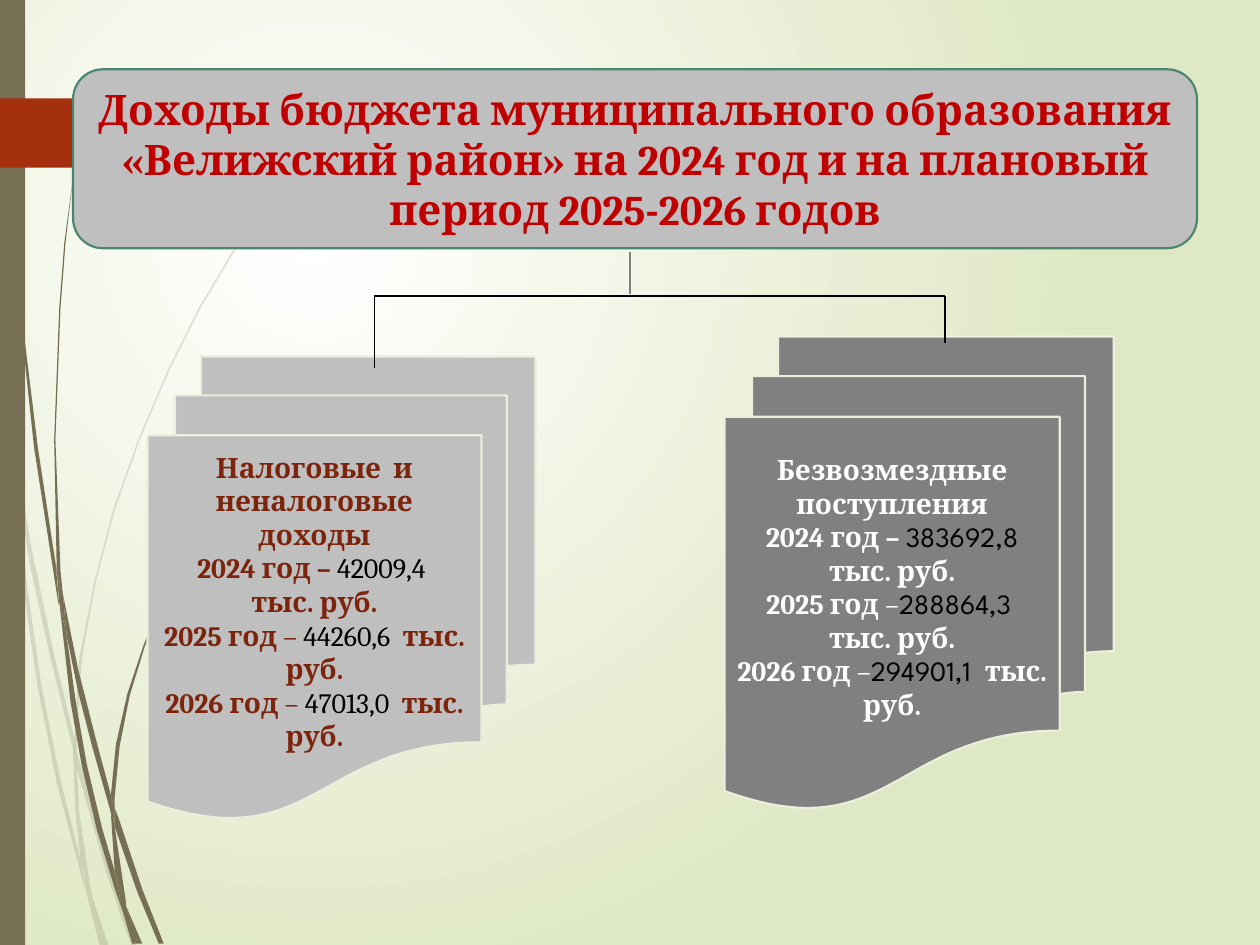
from dataclasses import dataclass

from lxml import etree
from pptx import Presentation
from pptx.dml.color import RGBColor
from pptx.enum.shapes import MSO_CONNECTOR, MSO_SHAPE
from pptx.enum.text import MSO_ANCHOR, PP_ALIGN
from pptx.oxml.ns import qn
from pptx.util import Emu, Inches, Pt

RECT, ROUND = MSO_SHAPE.RECTANGLE, MSO_SHAPE.ROUNDED_RECTANGLE
DOCS = MSO_SHAPE.FLOWCHART_MULTIDOCUMENT
STRAIGHT = MSO_CONNECTOR.STRAIGHT
MIDDLE, CENTER = MSO_ANCHOR.MIDDLE, PP_ALIGN.CENTER

WHITE = RGBColor(0xFF, 0xFF, 0xFF)
BLACK = RGBColor(0, 0, 0)
PALE_GREEN = RGBColor(0xDF, 0xE8, 0xC4)
CREAM = RGBColor(0xEA, 0xEF, 0xDB)
OLIVE = RGBColor(0x76, 0x6F, 0x54)
RUST = RGBColor(0xA5, 0x30, 0x10)
BROWN = RGBColor(0x7C, 0x24, 0x0C)
RED = RGBColor(0xC0, 0, 0)
GREEN = RGBColor(0x4B, 0x86, 0x6E)
SILVER = RGBColor(0xBF, 0xBF, 0xBF)
GRAY = RGBColor(0x80, 0x80, 0x80)

SERIF, SANS = "Cambria", "League Spartan"
WIDTH, HEIGHT = Inches(10), Inches(7.5)
UNIT = WIDTH / 10  # square grid, 10 columns by 7.5 rows

Point = tuple[float, float]


def emu(*lengths: float) -> list[Emu]:
    return [Emu(round(length * UNIT)) for length in lengths]


@dataclass
class Box:
    col: float
    row: float
    cols: float
    rows: float

    def emu(self) -> list[Emu]:
        return emu(self.col, self.row, self.cols, self.rows)


@dataclass
class Income:
    box: Box
    fill: RGBColor
    color: RGBColor
    number_font: str
    heading: str
    years: list[list[tuple[str, str]]]  # text and style: b bold, d dash, n number


# Outlines of the grass blades, in grid units
FAINT_BLADES: list[list[Point]] = [
    [(.4, 5.22), (.59, 5.99), (.59, 5.86), (.43, 5.2), (.25, 4.35), (.1, 3.45),
     (.12, 3.76), (.24, 4.5)],
    [(.64, 6.07), (.61, 5.96), (.61, 6.1), (.85, 6.94), (1.04, 7.5), (1.08, 7.5), (.88, 6.92)],
    [(.83, 7.5), (.86, 7.5), (.73, 7.11)],
    [(.64, 6.83), (.48, 6.19), (.33, 5.45), (.22, 4.69), (.12, 3.76), (.08, 3.5), (.19, 4.7),
     (.3, 5.46), (.45, 6.21), (.64, 6.93), (.7, 7.14), (.69, 7.07)],
    [(.58, 5.99), (.6, 6.46), (.64, 6.83), (.67, 6.92), (.73, 7.11), (.72, 7.06), (.63, 6.46),
     (.61, 6.1), (.61, 6.08)],
    [(.61, 5.84), (.65, 5.22), (.76, 4.62), (.91, 4.05), (1.11, 3.49), (1.34, 2.95), (1.59, 2.45),
     (1.87, 1.98), (2.01, 1.75), (2.17, 1.54), (2.17, 1.53), (2.01, 1.75), (1.86, 1.97),
     (1.58, 2.44), (1.33, 2.94), (1.1, 3.48), (.9, 4.04), (.75, 4.61), (.63, 5.22), (.59, 5.84),
     (.59, 5.86), (.61, 5.96)],
    [(.7, 7.14), (.79, 7.5), (.82, 7.5)],
    [(.61, 6.08), (.61, 6.1), (.61, 5.96), (.59, 5.86), (.58, 5.99)],
    [(.67, 6.92), (.65, 6.83), (.69, 7.07), (.7, 7.14), (.82, 7.5), (.83, 7.5), (.73, 7.11)],
]
DARK_BLADES: list[list[Point]] = [
    [(.05, 1.1), (.14, 2.33), (.27, 3.55), (.46, 4.77), (.47, 4.81), (.45, 4.57), (.45, 4.53),
     (.3, 3.55), (.15, 2.32), (.06, 1.09), (.04, .48), (.03, 0), (.02, 0), (.03, .48)],
    [(.73, 5.92), (.88, 6.45), (.88, 6.33), (.88, 6.31), (.77, 5.9), (.62, 5.31), (.5, 4.72),
     (.53, 5.05), (.62, 5.49)],
    [(.94, 6.49), (.91, 6.41), (.91, 6.56), (1.09, 7.08), (1.26, 7.49), (1.3, 7.49), (1.13, 7.06)],
    [(.91, 6.91), (.81, 6.57), (.69, 6.07), (.6, 5.56), (.53, 5.05), (.47, 4.77), (.56, 5.57),
     (.65, 6.08), (.77, 6.59), (.92, 7.08), (.97, 7.22), (.96, 7.17)],
    [(.5, 4.72), (.48, 4.53), (.44, 3.49), (.48, 2.45), (.52, 1.93), (.58, 1.41), (.51, 1.93),
     (.47, 2.45), (.43, 3.49), (.45, 4.49), (.49, 4.72)],
    [(1.1, 7.49), (1.13, 7.49), (1, 7.19)],
    [(.47, 4.77), (.53, 5.05), (.5, 4.72), (.49, 4.72), (.45, 4.49), (.45, 4.53)],
    [(.91, 6.33), (.95, 5.92), (1.03, 5.52), (1.15, 5.13), (1.31, 4.76), (1.49, 4.4), (1.69, 4.06),
     (1.91, 3.74), (2.03, 3.59), (2.16, 3.44), (2.15, 3.44), (2.03, 3.58), (1.91, 3.73),
     (1.68, 4.05), (1.47, 4.39), (1.29, 4.74), (1.14, 5.12), (1.01, 5.51), (.92, 5.91),
     (.88, 6.31), (.91, 6.41)],
    [(.97, 7.22), (1.05, 7.49), (1.08, 7.49)],
    [(.88, 6.45), (.91, 6.91), (.96, 7.06), (1, 7.19), (1, 7.16), (.91, 6.56), (.9, 6.51)],
    [(.88, 6.45), (.9, 6.51), (.91, 6.56), (.91, 6.41), (.88, 6.31), (.88, 6.33)],
    [(.96, 7.06), (.91, 6.91), (.96, 7.17), (.97, 7.22), (1.08, 7.49), (1.1, 7.49), (1, 7.19)],
]
ARROW: list[Point] = [(0, .78), (1.21, .78), (1.24, .79), (1.49, 1.04), (1.49, 1.07),
                      (1.24, 1.32), (1.21, 1.33), (0, 1.33)]

TITLE = ("Доходы бюджета муниципального образования «Велижский район» "
         "на 2024 год и на плановый период 2025-2026 годов")
RUB = ("тыс. руб.", "b")
GRANTS = Income(Box(5.75, 2.67, 3.09, 3.75), GRAY, WHITE, SANS, "Безвозмездные поступления", [
    [("2024 год – ", "b"), ("383692,8 ", "n"), RUB],
    [("2025 год ", "b"), ("–", "d"), ("288864,3  ", "n"), RUB],
    [("2026 год ", "b"), ("–", "d"), ("294901,1  ", "n"), RUB],
])
TAXES = Income(Box(1.17, 2.83, 3.08, 3.67), SILVER, BROWN, SERIF,
               "Налоговые  и неналоговые доходы", [
    [("2024 год – ", "b"), ("42009,4 ", "n")],
    [RUB],
    [("2025 год ", "b"), ("– ", "d"), ("44260,6  ", "n"), RUB],
    [("2026 год ", "b"), ("– ", "d"), ("47013,0  ", "n"), RUB],
])


def paint(sp, fill: RGBColor, line: RGBColor | None = None, alpha: int = 100) -> None:
    sp.shadow.inherit = False
    sp.fill.solid()
    sp.fill.fore_color.rgb = fill
    if alpha < 100:
        color = sp._element.spPr.find(qn("a:solidFill"))[0]
        etree.SubElement(color, qn("a:alpha")).set("val", str(alpha * 1000))
    if line is None:
        sp.line.fill.background()
    else:
        sp.line.color.rgb = line
        sp.line.width = Pt(1.25)


def add_box(s, kind, box: Box, fill: RGBColor, line: RGBColor | None = None):
    sp = s.shapes.add_shape(kind, *box.emu())
    paint(sp, fill, line)
    sp.text_frame.word_wrap = True
    sp.text_frame.vertical_anchor = MIDDLE
    return sp


def add_outline(s, points: list[Point], fill: RGBColor, alpha: int = 100) -> None:
    start, *rest = [emu(*point) for point in points]
    builder = s.shapes.build_freeform(*start)
    builder.add_line_segments(rest, close=True)
    paint(builder.convert_to_shape(), fill, alpha=alpha)


def add_line(s, start: Point, end: Point, color: RGBColor = BLACK) -> None:
    line = s.shapes.add_connector(STRAIGHT, *emu(*start, *end))
    line.line.color.rgb = color
    line.line.width = Pt(0.75)
    etree.SubElement(line._element.spPr, qn("a:effectLst"))


def add_run(p, text: str, *, size: float, color: RGBColor, font: str = SERIF,
            bold: bool = True) -> None:
    p.alignment = CENTER
    r = p.add_run()
    r.text = text
    r.font.size, r.font.name, r.font.bold = Pt(size), font, bold
    r.font.color.rgb = color


def add_income(s, income: Income) -> None:
    sp = add_box(s, DOCS, income.box, income.fill, CREAM)
    tf = sp.text_frame
    tf.margin_bottom = Inches(0.32)
    styles = {
        "b": dict(color=income.color),
        "d": dict(color=income.color, bold=False),
        "n": dict(color=BLACK, bold=False, font=income.number_font),
    }
    add_run(tf.paragraphs[0], income.heading, size=16, **styles["b"])
    for year in income.years:
        p = tf.add_paragraph()
        for text, style in year:
            add_run(p, text, size=16, **styles[style])


def set_background(s) -> None:
    fill = s.background.fill
    fill.gradient()
    for stop, color in zip(fill.gradient_stops, (WHITE, PALE_GREEN)):
        stop.color.rgb = color
    grad = s._element.find(".//" + qn("a:gradFill"))
    grad.remove(grad.find(qn("a:lin")))
    radial = etree.SubElement(grad, qn("a:path"), path="circle")
    etree.SubElement(radial, qn("a:fillToRect"), l="50000", t="50000", r="100000", b="100000")


def main() -> None:
    prs = Presentation()
    prs.slide_width, prs.slide_height = WIDTH, HEIGHT
    s = prs.slides.add_slide(prs.slide_layouts[6])

    # Backdrop: gradient, grass, side bar and arrow
    set_background(s)
    for blades, alpha in ((FAINT_BLADES, 20), (DARK_BLADES, 100)):
        for blade in blades:
            add_outline(s, blade, OLIVE, alpha)
    add_box(s, RECT, Box(0, 0, 0.2, 7.5), OLIVE)
    add_outline(s, ARROW, RUST)

    # Title and the two kinds of income
    add_income(s, GRANTS)
    title = add_box(s, ROUND, Box(0.58, 0.55, 8.92, 1.42), SILVER, GREEN)
    add_run(title.text_frame.paragraphs[0], TITLE, size=24, color=RED)
    add_income(s, TAXES)

    # Branches from the title
    left, right, level = 2.97, 7.5, 2.35
    add_line(s, (left, level), (right, level))
    add_line(s, (left, level), (left, 2.92))
    add_line(s, (right, level), (right, 2.72))
    add_line(s, (5, 2), (5, 2.33), GRAY)

    prs.save("out.pptx")


if __name__ == "__main__":
    main()
